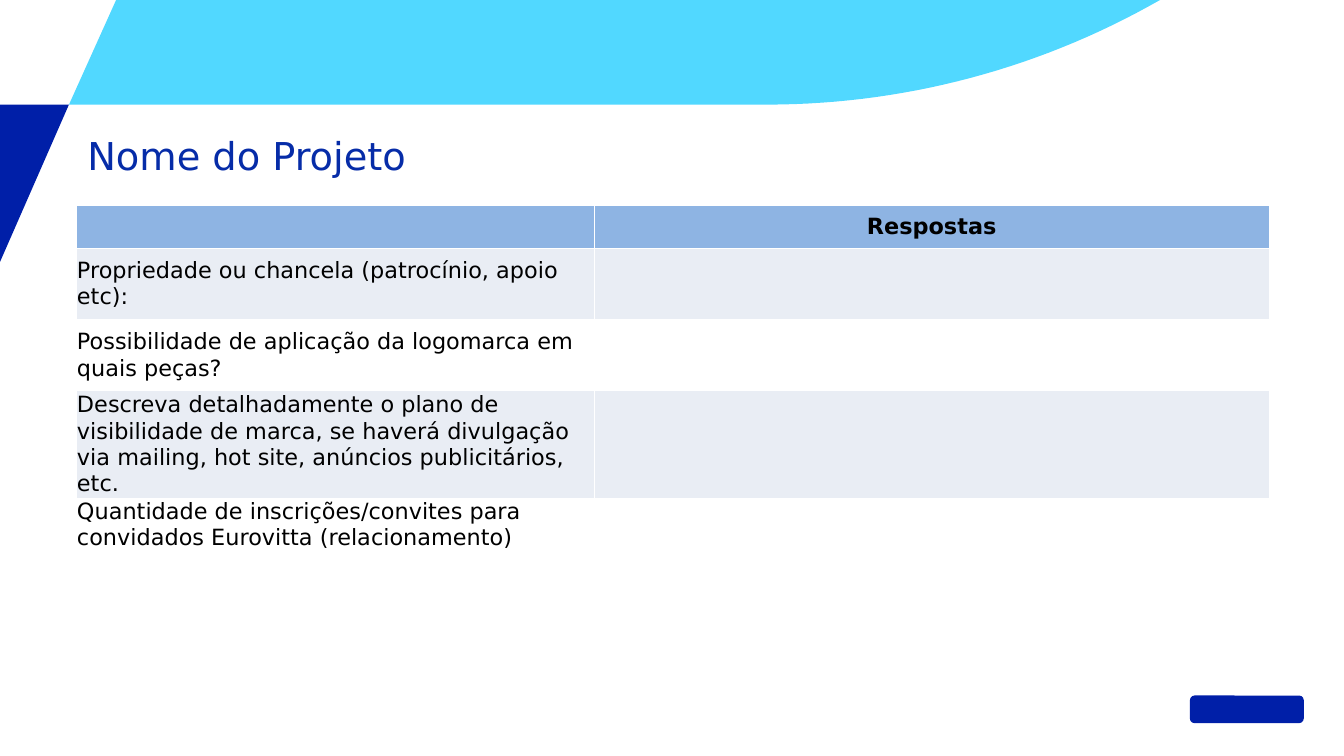
from math import asin, cos, sin

from lxml.etree import SubElement
from pptx import Presentation
from pptx.dml.color import RGBColor
from pptx.enum.shapes import MSO_SHAPE
from pptx.enum.text import MSO_ANCHOR, PP_ALIGN
from pptx.oxml.ns import qn
from pptx.util import Inches, Pt

FONT = "DejaVu Sans"
CYAN = RGBColor(0x51, 0xD8, 0xFF)
NAVY = RGBColor(0x00, 0x1F, 0xA8)
TITLE_BLUE = RGBColor(0x06, 0x2C, 0xA8)
HEADER_BLUE = RGBColor(0x8E, 0xB4, 0xE3)
BAND_GRAY = RGBColor(0xE9, 0xED, 0xF4)
BLACK = RGBColor(0, 0, 0)
SLIDE_WIDTH = 11.69


def add_run(paragraph, text, size, color, bold=False):
    run = paragraph.add_run()
    run.text = text
    run.font.name = FONT
    run.font.size = Pt(size)
    run.font.bold = bold
    run.font.color.rgb = color


def paint(shape, color):
    shape.fill.solid()
    shape.fill.fore_color.rgb = color
    shape.line.fill.background()
    shape.shadow.inherit = False


# Widescreen slide, 16 to 9
presentation = Presentation()
presentation.slide_width = Inches(SLIDE_WIDTH)
presentation.slide_height = Inches(SLIDE_WIDTH * 9 / 16)
slide = presentation.slides.add_slide(presentation.slide_layouts[6])

# Header band: its right end is a circular arc tangent to the lower edge
BAND_BOTTOM = 0.91
ARC_START, ARC_END, RADIUS, STEPS = 6.67, 10.09, 6.88, 30
sweep = asin((ARC_END - ARC_START) / RADIUS)
arc = []
for step in range(STEPS + 1):
    angle = sweep * step / STEPS
    arc.append((ARC_START + RADIUS * sin(angle),
                max(0, BAND_BOTTOM - RADIUS * (1 - cos(angle)))))
band = [(1.01, 0), (0.6, BAND_BOTTOM)] + arc
wedge = [(0.6, BAND_BOTTOM), (0, BAND_BOTTOM), (0, 2.28)]

for points, color in ((band, CYAN), (wedge, NAVY)):
    corners = [(Inches(x), Inches(y)) for x, y in points]
    builder = slide.shapes.build_freeform(*corners[0])
    builder.add_line_segments(corners[1:], close=True)
    paint(builder.convert_to_shape(), color)

# Plain mark in the logo position
mark = slide.shapes.add_shape(MSO_SHAPE.ROUNDED_RECTANGLE, Inches(10.35),
                              Inches(6.05), Inches(0.99), Inches(0.24))
paint(mark, NAVY)

# Title
title = slide.shapes.add_textbox(Inches(0.76), Inches(1.15), Inches(8.3), Inches(0.4))
frame = title.text_frame
frame.word_wrap = True
frame.margin_left = frame.margin_right = frame.margin_top = frame.margin_bottom = 0
add_run(frame.paragraphs[0], "Nome do Projeto", 24, TITLE_BLUE)

# Question table
ROWS = [
    ("", "Respostas"),
    ("Propriedade ou chancela (patrocínio, apoio etc):", ""),
    ("Possibilidade de aplicação da logomarca em quais peças?", ""),
    ("Descreva detalhadamente o plano de visibilidade de marca, se haverá "
     "divulgação via mailing, hot site, anúncios publicitários, etc.", ""),
    ("Quantidade de inscrições/convites para convidados Eurovitta (relacionamento)", ""),
]
COLUMN_WIDTHS = [4.51, 5.87]
ROW_HEIGHTS = [0.37, 0.62, 0.62, 0.83, 0.94]
LAST_ROW = len(ROWS) - 1

table = slide.shapes.add_table(
    len(ROWS), len(COLUMN_WIDTHS), Inches(0.66), Inches(1.79),
    Inches(sum(COLUMN_WIDTHS)), Inches(sum(ROW_HEIGHTS))).table
for column, width in zip(table.columns, COLUMN_WIDTHS):
    column.width = Inches(width)
for row, height in zip(table.rows, ROW_HEIGHTS):
    row.height = Inches(height)

for row_index, texts in enumerate(ROWS):
    is_header = row_index == 0
    for column_index, text in enumerate(texts):
        cell = table.cell(row_index, column_index)
        cell.margin_left = cell.margin_right = Inches(0.01)
        cell.margin_top = cell.margin_bottom = 0
        cell.vertical_anchor = (MSO_ANCHOR.TOP if row_index == LAST_ROW
                                else MSO_ANCHOR.MIDDLE)

        # White borders come before the fill in the cell properties
        properties = cell._tc.get_or_add_tcPr()
        for side in ("a:lnL", "a:lnR", "a:lnT", "a:lnB"):
            border = SubElement(properties, qn(side), w=str(Pt(1)))
            fill = SubElement(border, qn("a:solidFill"))
            SubElement(fill, qn("a:srgbClr"), val="FFFFFF")

        if is_header or row_index % 2:
            cell.fill.solid()
            cell.fill.fore_color.rgb = HEADER_BLUE if is_header else BAND_GRAY
        else:
            cell.fill.background()

        if text:
            paragraph = cell.text_frame.paragraphs[0]
            paragraph.alignment = PP_ALIGN.CENTER if is_header else PP_ALIGN.LEFT
            add_run(paragraph, text, 14, BLACK, bold=is_header)

presentation.save("out.pptx")
